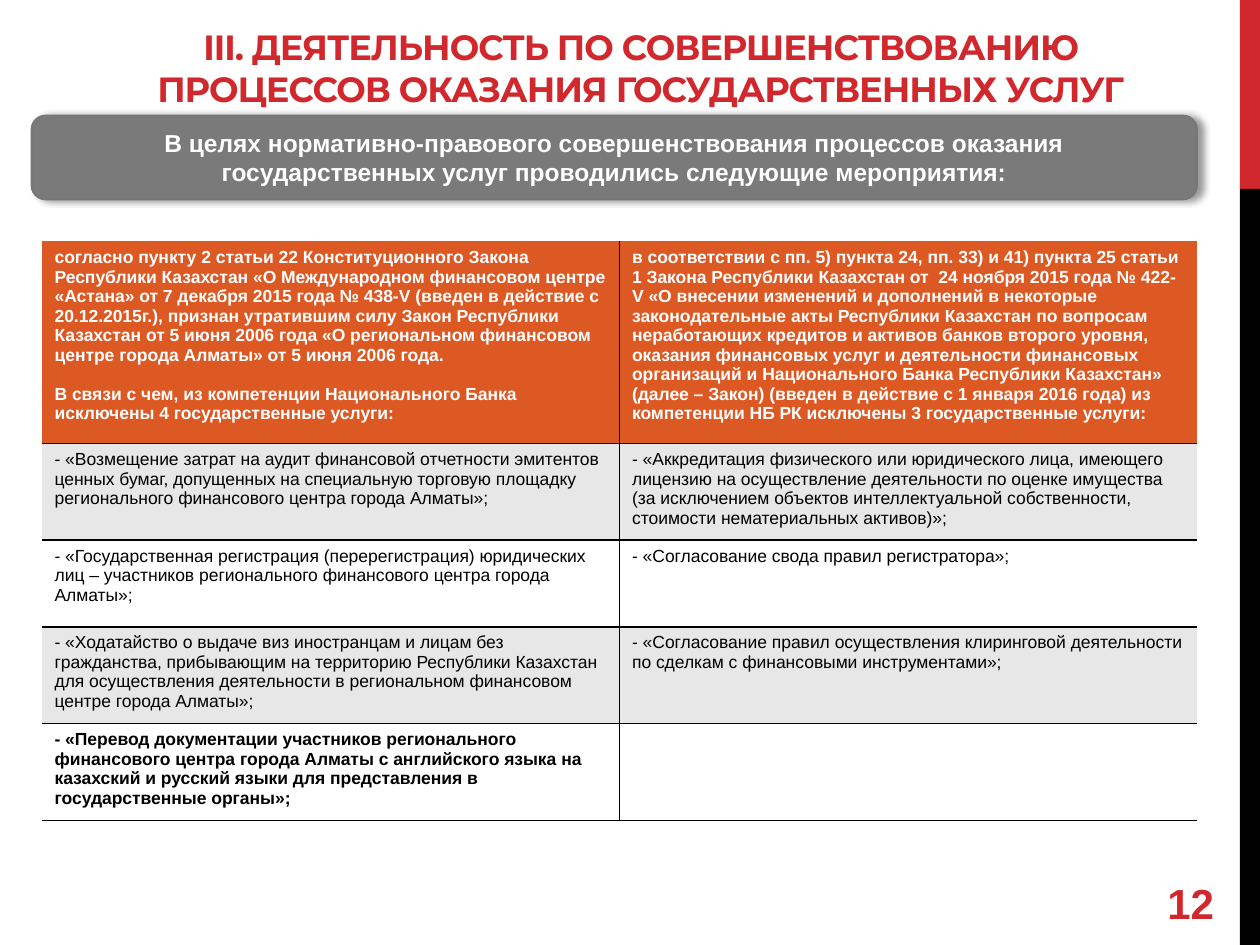
import pptx
import pptx.dml.color
import pptx.enum.shapes
import pptx.enum.text
import pptx.oxml.ns
import pptx.util
from lxml import etree

Pt = pptx.util.Pt
qn = pptx.oxml.ns.qn
SHAPE = pptx.enum.shapes.MSO_SHAPE
ALIGN = pptx.enum.text.PP_ALIGN
ANCHOR = pptx.enum.text.MSO_ANCHOR

COLORS = {
    "red": "D1282E", "black": "000000", "white": "FFFFFF", "gray": "7A7A7A",
    "edge": "777777", "orange": "DC5924", "pale": "E7E7E7",
}

TITLE = ("III. ДЕЯТЕЛЬНОСТЬ ПО СОВЕРШЕНСТВОВАНИЮ ПРОЦЕССОВ "
         "ОКАЗАНИЯ ГОСУДАРСТВЕННЫХ УСЛУГ")
BANNER = ("В целях нормативно-правового совершенствования процессов оказания\n"
          "государственных услуг проводились следующие мероприятия:")
ROWS = [
    ("согласно пункту 2 статьи 22 Конституционного Закона Республики Казахстан "
     "«О Международном финансовом центре «Астана» от 7 декабря 2015 года № 438-V "
     "(введен в действие с 20.12.2015г.), признан утратившим силу Закон Республики "
     "Казахстан от 5 июня 2006 года «О региональном финансовом центре города Алматы» "
     "от 5 июня 2006 года.\n"
     "В связи с чем, из компетенции Национального Банка исключены "
     "4 государственные услуги:",
     "в соответствии с пп. 5) пункта 24, пп. 33) и 41) пункта 25 статьи 1 Закона "
     "Республики Казахстан от  24 ноября 2015 года № 422-V «О внесении изменений и "
     "дополнений в некоторые законодательные акты Республики Казахстан по вопросам "
     "неработающих кредитов и активов банков второго уровня, оказания финансовых услуг "
     "и деятельности финансовых организаций и Национального Банка Республики Казахстан» "
     "(далее – Закон) (введен в действие с 1 января 2016 года) из  компетенции НБ РК "
     "исключены 3 государственные услуги:"),
    ("- «Возмещение затрат на аудит финансовой отчетности эмитентов ценных бумаг, "
     "допущенных на специальную торговую площадку регионального финансового центра "
     "города Алматы»;",
     "- «Аккредитация физического или юридического лица, имеющего лицензию на "
     "осуществление деятельности по оценке имущества \v(за исключением объектов "
     "интеллектуальной собственности, стоимости нематериальных активов)»;"),
    ("- «Государственная регистрация (перерегистрация) юридических \vлиц – участников "
     "регионального финансового центра города Алматы»;",
     "- «Согласование свода правил регистратора»;"),
    ("- «Ходатайство о выдаче виз иностранцам и лицам без гражданства, прибывающим на "
     "территорию Республики Казахстан для осуществления деятельности в региональном "
     "финансовом центре города Алматы»;",
     "- «Согласование правил осуществления клиринговой деятельности по сделкам с "
     "финансовыми инструментами»;"),
    ("- «Перевод документации участников регионального финансового центра города Алматы "
     "с английского языка на казахский и русский языки для представления в "
     "государственные органы»;",
     ""),
]
HEIGHTS = [108, 52, 49.5, 52, 52]


def rgb(name):
    return pptx.dml.color.RGBColor.from_string(COLORS[name])


def write(frame, text, size, color, bold=True, face="Arial", align=ALIGN.LEFT):
    frame.text = text
    for para in frame.paragraphs:
        para.alignment = align
        for font in [para.font] + [run.font for run in para.runs]:
            font.name, font.size, font.bold = face, Pt(size), bold
            font.color.rgb = rgb(color)


def add_box(slide, kind, left, top, width, height, fill):
    box = slide.shapes.add_shape(kind, Pt(left), Pt(top), Pt(width), Pt(height))
    box.shadow.inherit = False
    box.fill.solid()
    box.fill.fore_color.rgb = rgb(fill)
    box.line.fill.background()
    return box


def cast_shadow(shape, blur, dist, alpha):
    effects = shape.element.spPr.find(qn("a:effectLst"))
    outer = etree.SubElement(effects, qn("a:outerShdw"), blurRad=str(Pt(blur)),
                             dist=str(Pt(dist)), dir="0", algn="ctr", rotWithShape="0")
    color = etree.SubElement(outer, qn("a:srgbClr"), val=COLORS["black"])
    etree.SubElement(color, qn("a:alpha"), val=str(alpha * 1000))


def set_edges(cell, shown):
    """Draw the sides named in shown (of L, R, T, B) and clear the others."""
    props = cell._tc.get_or_add_tcPr()
    for side in "LRTB":
        line = etree.SubElement(props, qn("a:ln" + side), w=str(Pt(1)))
        if side in shown:
            fill = etree.SubElement(line, qn("a:solidFill"))
            etree.SubElement(fill, qn("a:srgbClr"), val=COLORS["black"])
        else:
            etree.SubElement(line, qn("a:noFill"))


def set_title(slide):
    title = slide.shapes.title
    title.left, title.top, title.width, title.height = Pt(42), Pt(12), Pt(648), Pt(54)
    frame = title.text_frame
    frame.auto_size = pptx.enum.text.MSO_AUTO_SIZE.NONE
    frame.vertical_anchor = ANCHOR.BOTTOM
    write(frame, TITLE, 20, "red", face="Montserrat", align=ALIGN.CENTER)
    for run in frame.paragraphs[0].runs:
        run.font._element.set("spc", "-60")


def add_banner(slide):
    banner = add_box(slide, SHAPE.ROUNDED_RECTANGLE, 18, 66, 666, 48, "gray")
    banner.line.color.rgb = rgb("edge")
    banner.line.width = Pt(1)
    cast_shadow(banner, 4, 3, 40)
    banner.text_frame.word_wrap = False
    banner.text_frame.vertical_anchor = ANCHOR.MIDDLE
    write(banner.text_frame, BANNER, 14, "white", align=ALIGN.CENTER)


def add_grid(slide):
    last = len(ROWS) - 1
    table = slide.shapes.add_table(len(ROWS), 2, Pt(24), Pt(138), Pt(660),
                                   Pt(sum(HEIGHTS))).table
    table.first_row = table.horz_banding = False
    for r, texts in enumerate(ROWS):
        table.rows[r].height = Pt(HEIGHTS[r])
        fill = "orange" if r == 0 else "pale" if r % 2 else "white"
        for c, text in enumerate(texts):
            cell = table.cell(r, c)
            set_edges(cell, ("L" if c else "R") + ("TB" if r else "B"))
            cell.fill.solid()
            cell.fill.fore_color.rgb = rgb(fill)
            write(cell.text_frame, text, 10, "black" if r else "white", r in (0, last))
            for para in cell.text_frame.paragraphs[1:]:
                para.space_before = Pt(11)


def add_number(slide):
    box = slide.shapes.add_textbox(Pt(660), Pt(498), Pt(48), Pt(36))
    box.text_frame.word_wrap = True
    box.text_frame.vertical_anchor = ANCHOR.MIDDLE
    write(box.text_frame, "12", 24, "red")


def main():
    deck = pptx.Presentation()
    deck.slide_width, deck.slide_height = Pt(720), Pt(540)
    slide = deck.slides.add_slide(deck.slide_layouts[5])
    add_box(slide, SHAPE.RECTANGLE, 708.5, 0, 11.5, 108, "red")
    add_box(slide, SHAPE.RECTANGLE, 708.5, 108, 11.5, 432, "black")
    add_number(slide)
    add_banner(slide)
    set_title(slide)
    add_grid(slide)
    deck.save("out.pptx")


if __name__ == "__main__":
    main()
